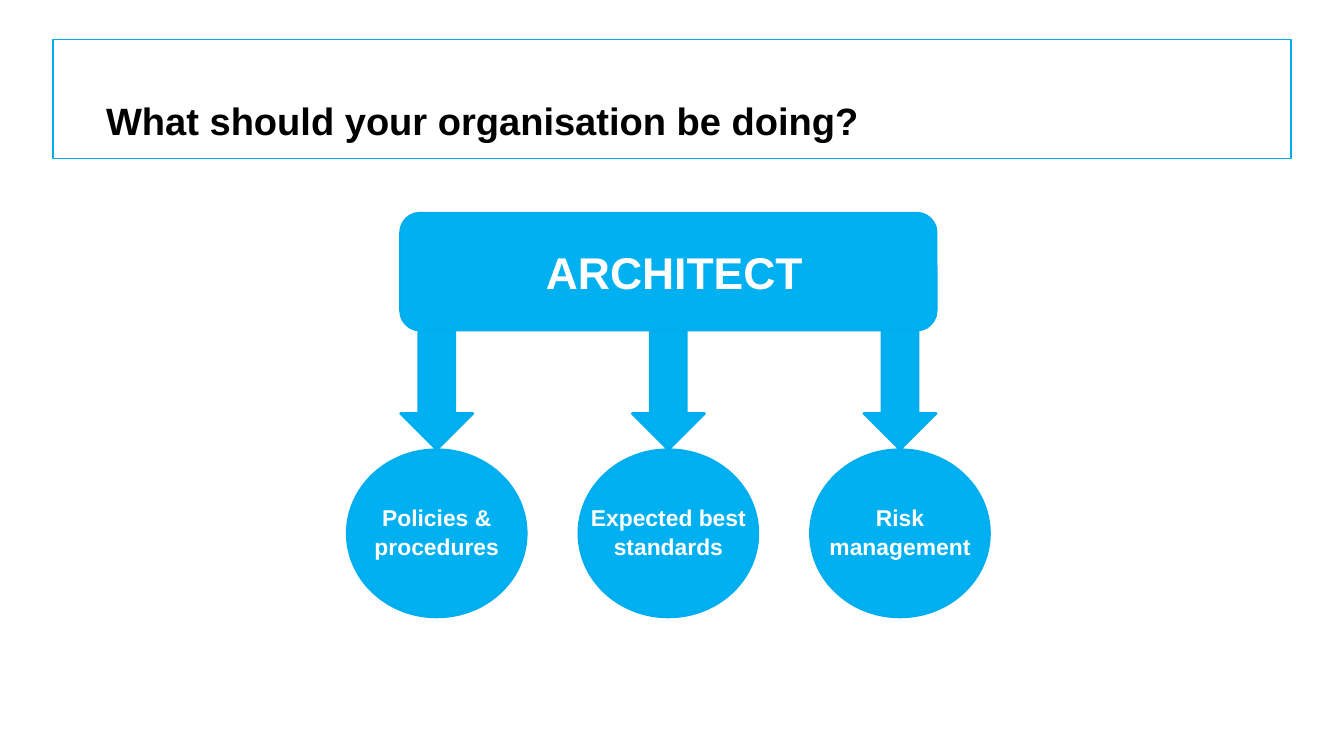
from pptx import Presentation
from pptx.dml.color import RGBColor
from pptx.enum.shapes import MSO_SHAPE as SHAPE
from pptx.enum.text import MSO_ANCHOR as ANCHOR, MSO_AUTO_SIZE as AUTO, PP_ALIGN as ALIGN
from pptx.util import Pt

FILL, EDGE = "00B0F0", "00AEEF"
DUTIES = ["Policies & procedures", "Expected best standards", "Risk management"]


def color(value):
    """Return the colour for a hex string."""
    return RGBColor.from_string(value)


def write(tf, text, size=18, ink="FFFFFF", align=ALIGN.CENTER, spacing=1.07):
    """Write one bold paragraph into a text frame."""
    tf.word_wrap = True
    p = tf.paragraphs[0]
    p.alignment = align
    p.line_spacing = spacing
    r = p.add_run()
    r.text = text
    r.font.name = "Arial"
    r.font.size = Pt(size)
    r.font.bold = True
    r.font.color.rgb = color(ink)


def add_block(s, kind, x, y, w, h, fill=FILL, line=2):
    """Add an outlined preset shape, unfilled when fill is None."""
    sp = s.shapes.add_shape(kind, Pt(x), Pt(y), Pt(w), Pt(h))
    sp.shadow.inherit = False
    if fill:
        sp.fill.solid()
        sp.fill.fore_color.rgb = color(fill)
    else:
        sp.fill.background()
    sp.line.color.rgb = color(EDGE)
    sp.line.width = Pt(line)


def add_label(s, text, x, y, w, h, **style):
    """Add a centred text box."""
    tf = s.shapes.add_textbox(Pt(x), Pt(y), Pt(w), Pt(h)).text_frame
    write(tf, text, **style)


def add_header(s, text, x, y, w, h):
    """Place the slide title inside a framed band."""
    add_block(s, SHAPE.RECTANGLE, x, y, w, h, fill=None, line=1)
    sp = s.shapes.title
    sp.left, sp.top, sp.width, sp.height = Pt(x + 41.7), Pt(y), Pt(754), Pt(h - 12.2)
    tf = sp.text_frame
    tf.margin_left = tf.margin_top = tf.margin_right = tf.margin_bottom = 0
    tf.vertical_anchor = ANCHOR.BOTTOM
    tf.auto_size = AUTO.NONE
    write(tf, text, size=30, ink="000000", align=ALIGN.LEFT, spacing=1)


def add_duty(s, text, center, y):
    """Add an arrow that leads down to a labelled circle."""
    arrow_w, arrow_h, circle_w, circle_h = 57, 93.6, 141.1, 131.8
    left, top = center - circle_w / 2, y + arrow_h
    add_block(s, SHAPE.DOWN_ARROW, center - arrow_w / 2, y, arrow_w, arrow_h)
    add_block(s, SHAPE.OVAL, left, top, circle_w, circle_h)
    add_label(s, text, left, top + 37.5, circle_w, 51)


def add_diagram(s, x, y, w, h):
    """Add the architect box with its duties spread below."""
    add_block(s, SHAPE.ROUNDED_RECTANGLE, x, y, w, h)
    add_label(s, "ARCHITECT", x + 103, y + 18.7, 225.4, 49.7, size=35)
    step = 182.4
    for i, duty in enumerate(DUTIES):
        add_duty(s, duty, x + w / 2 + (i - 1) * step, y + h + 0.6)


def main():
    """Build and save the slide."""
    prs = Presentation()
    prs.slide_width, prs.slide_height = Pt(1058.4), Pt(595.44)
    s = prs.slides.add_slide(prs.slide_layouts[5])
    add_header(s, "What should your organisation be doing?", 41.8, 31, 974.9, 93.6)
    add_diagram(s, 315.4, 167.8, 421.9, 92.2)
    prs.save("out.pptx")


if __name__ == "__main__":
    main()
